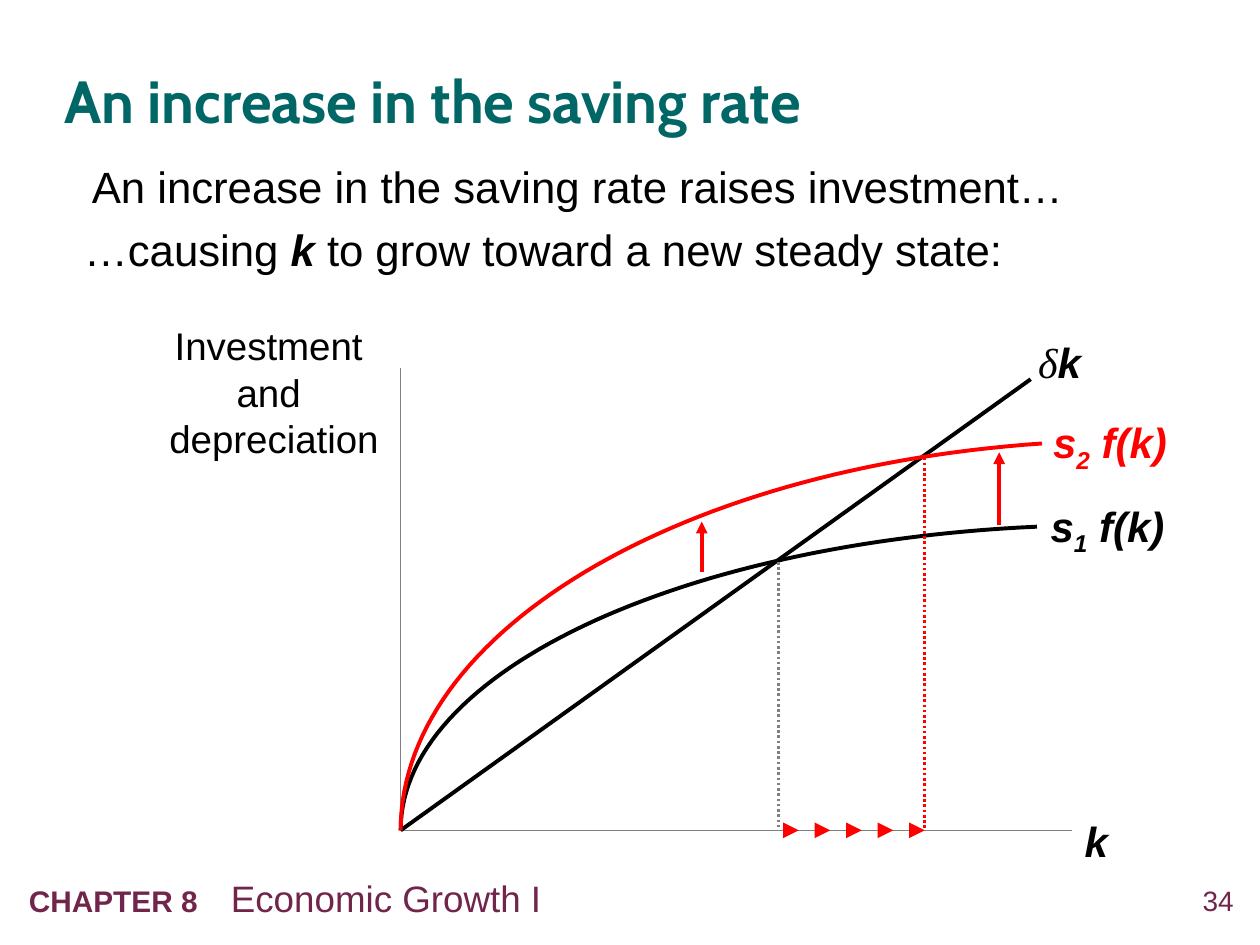
from pptx import Presentation
from pptx.dml.color import RGBColor
from pptx.enum.dml import MSO_LINE
from pptx.enum.shapes import MSO_CONNECTOR
from pptx.enum.text import MSO_ANCHOR, PP_ALIGN
from pptx.oxml.ns import qn
from pptx.util import Inches, Pt
from lxml import etree

BLACK = RGBColor(0, 0, 0)
RED = RGBColor(0xFF, 0, 0)
GRAY = RGBColor(0x80, 0x80, 0x80)
TEAL = RGBColor(0, 0x66, 0x66)
PLUM = RGBColor(0x71, 0x25, 0x4B)

prs = Presentation()
prs.slide_width, prs.slide_height = Inches(10), Inches(7.5)
s = prs.slides.add_slide(prs.slide_layouts[5])


def add_text(x, y, w, h, runs, size, color=BLACK, bold=False, italic=False):
    """Add a one-paragraph text box; runs are (text, font overrides)."""
    tf = s.shapes.add_textbox(Inches(x), Inches(y), Inches(w), Inches(h)).text_frame
    tf.word_wrap = True
    p = tf.paragraphs[0]
    p.font.name, p.font.size = "Arial", Pt(size)
    p.font.bold, p.font.italic = bold, italic
    p.font.color.rgb = color
    for text, overrides in runs:
        r = p.add_run()
        r.text = text
        for key, value in overrides.items():
            setattr(r.font, key, value)
    return tf


def add_line(x1, y1, x2, y2, color, width, dash=None, arrow=False):
    line = s.shapes.add_connector(MSO_CONNECTOR.STRAIGHT, Inches(x1), Inches(y1),
                                  Inches(x2), Inches(y2))
    line.line.color.rgb, line.line.width = color, Pt(width)
    if dash:
        line.line.dash_style = dash
    if arrow:
        etree.SubElement(line.line._get_or_add_ln(), qn("a:tailEnd"), type="triangle")
    etree.SubElement(line._element.spPr, qn("a:effectLst"))


# Title
title = s.shapes.title
title.left, title.top = Inches(0.51), Inches(0.26)
title.width, title.height = Inches(9.02), Inches(1.03)
tf = title.text_frame
tf.margin_left = tf.margin_right = tf.margin_top = tf.margin_bottom = 0
tf.vertical_anchor = MSO_ANCHOR.MIDDLE
tf.text = "An increase in the saving rate"
p = tf.paragraphs[0]
p.alignment, p.line_spacing = PP_ALIGN.LEFT, 1.05
p.font.name, p.font.size, p.font.bold = "Cabin", Pt(34), True
p.font.color.rgb = TEAL

# Explanation
add_text(0.63, 1.22, 8.81, 0.52,
         [("An increase in the saving rate raises investment…", {})], 25)
add_text(0.57, 1.72, 8.82, 0.52,
         [("…causing ", {}), ("k", {"bold": True, "italic": True}),
          (" to grow toward a new steady state:", {})], 25)

# Axes
x0, y0 = 3.18, 6.59
add_line(x0, 2.92, x0, y0, GRAY, 0.75)
add_line(x0, y0, 8.51, y0, GRAY, 0.75)
tf = add_text(1.09, 2.51, 2.17, 1.2, [], 22)
tf.margin_left = tf.margin_right = Inches(0.05)
tf.paragraphs[0].text = "Investment \vand \vdepreciation"
tf.paragraphs[0].alignment = PP_ALIGN.CENTER
add_text(8.51, 6.42, 0.5, 0.5, [("k", {})], 24, bold=True, italic=True)

# Depreciation line
add_line(x0, y0, 8.18, 3.01, BLACK, 2.25)
add_text(8.14, 2.62, 0.72, 0.52,
         [("δ", {"name": "Times New Roman", "bold": False}), ("k", {})],
         24, bold=True, italic=True)

# Investment curves: cubic Bezier from the origin to the right end
curves = [
    ("1", BLACK, [(x0, y0), (3.18, 5.35), (5.36, 4.31), (8.23, 4.18)], (8.24, 3.92)),
    ("2", RED, [(x0, y0), (3.18, 5.03), (5.36, 3.72), (8.27, 3.52)], (8.26, 3.26)),
]
steps = 60
for index, color, controls, (label_x, label_y) in curves:
    points = []
    for i in range(steps + 1):
        t = i / steps
        weights = ((1 - t) ** 3, 3 * t * (1 - t) ** 2, 3 * t ** 2 * (1 - t), t ** 3)
        points.append([Inches(sum(w * c[axis] for w, c in zip(weights, controls)))
                       for axis in (0, 1)])
    builder = s.shapes.build_freeform(*points[0])
    builder.add_line_segments(points[1:], close=False)
    curve = builder.convert_to_shape()
    curve.fill.background()
    curve.line.color.rgb, curve.line.width = color, Pt(2.25)
    curve.shadow.inherit = False

    tf = add_text(label_x, label_y, 1.3, 0.5, [("s", {}), (index, {}), (" f(k)", {})],
                  24, color, bold=True, italic=True)
    tf.paragraphs[0].runs[1].font._element.set("baseline", "-25000")

# Steady states
add_line(6.18, 4.46, 6.18, y0, GRAY, 1.5, MSO_LINE.ROUND_DOT)
add_line(7.34, 3.63, 7.34, y0, RED, 1.5, MSO_LINE.ROUND_DOT)

# Upward shift of the curve
add_line(7.93, 4.17, 7.93, 3.59, RED, 2.25, arrow=True)
add_line(5.57, 4.54, 5.57, 4.14, RED, 2.25, arrow=True)

# Growth of k toward the new steady state
for i in range(5):
    x = 6.26 + 0.25 * i
    add_line(x, y0, x + 0.08, y0, RED, 3, arrow=True)

# Footer
tf = add_text(0.13, 6.9, 8.18, 0.45,
              [("CHAPTER 8    ", {"size": Pt(17), "bold": True}),
               ("Economic Growth I", {})], 21, PLUM)
tf = add_text(9.24, 7.01, 0.55, 0.32, [("34", {})], 16, PLUM)
tf.margin_left = tf.margin_right = tf.margin_top = tf.margin_bottom = 0
tf.paragraphs[0].alignment = PP_ALIGN.RIGHT

prs.save("out.pptx")
